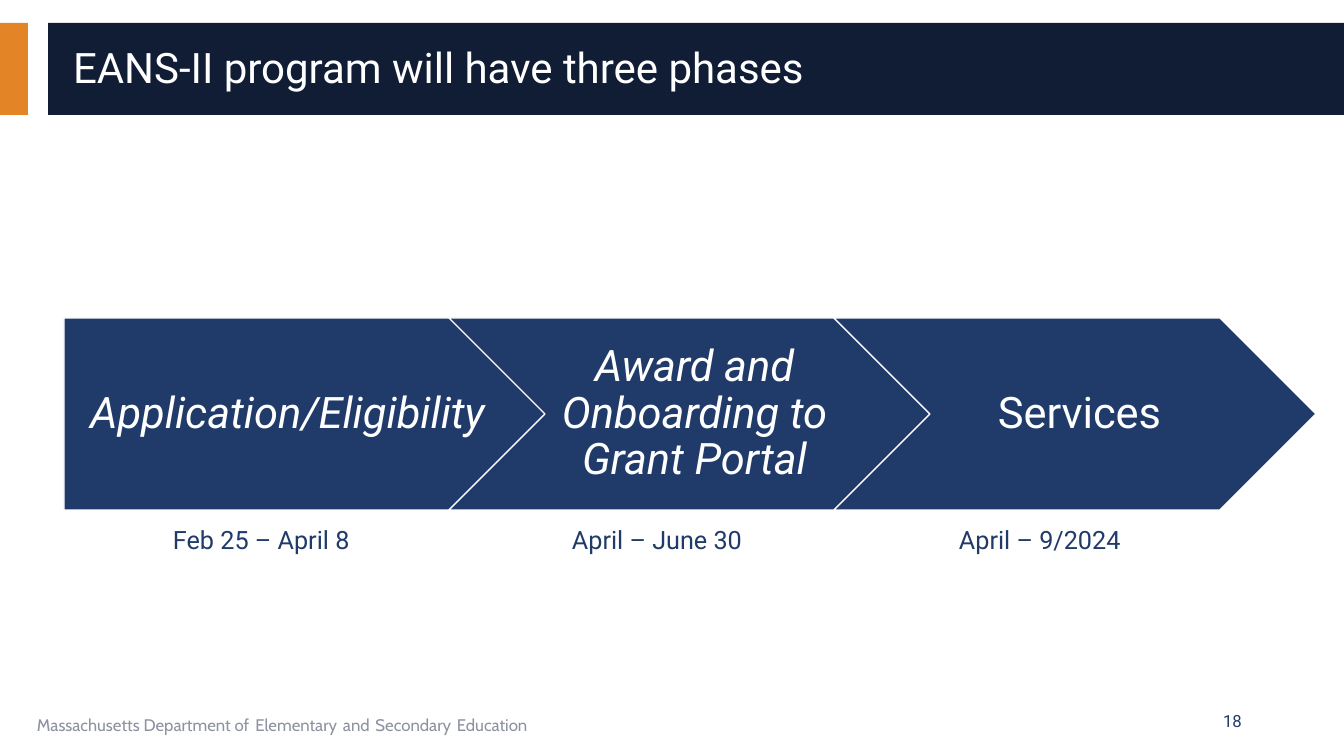
from pptx import Presentation
from pptx.dml.color import RGBColor
from pptx.enum.shapes import MSO_SHAPE
from pptx.enum.text import MSO_ANCHOR, PP_ALIGN
from pptx.util import Pt

EMU_PER_PX = 914400 / 100.8
RECTANGLE, PENTAGON, CHEVRON = MSO_SHAPE.RECTANGLE, MSO_SHAPE.PENTAGON, MSO_SHAPE.CHEVRON
TOP, MIDDLE = MSO_ANCHOR.TOP, MSO_ANCHOR.MIDDLE
LEFT, CENTER, RIGHT = PP_ALIGN.LEFT, PP_ALIGN.CENTER, PP_ALIGN.RIGHT
COLORS = {"orange": "E38526", "navy": "101D35", "blue": "203B6A",
          "grey": "8D92A1", "white": "FFFFFF"}


def add_text(pieces, box, size=18, font="Roboto", color="blue", italic=False,
             anchor=TOP, align=LEFT, spacing=None, insets=(10, 5, 10, 5)):
    """Each piece is (text, overrides), where overrides may set size and color."""
    frame = slide.shapes.add_textbox(*[round(v * EMU_PER_PX) for v in box]).text_frame
    frame.word_wrap = True
    frame.vertical_anchor = anchor
    (frame.margin_left, frame.margin_top,
     frame.margin_right, frame.margin_bottom) = [round(v * EMU_PER_PX) for v in insets]
    paragraph = frame.paragraphs[0]
    paragraph.alignment = align
    paragraph.line_spacing = spacing
    for text, overrides in pieces:
        run = paragraph.add_run()
        run.text = text
        run.font.name = font
        run.font.size = Pt(overrides.get("size", size))
        run.font.italic = italic
        run.font.color.rgb = RGBColor.from_string(COLORS[overrides.get("color", color)])


def add_block(kind, box, fill, outline=None):
    block = slide.shapes.add_shape(kind, *[round(v * EMU_PER_PX) for v in box])
    block.shadow.inherit = False
    block.fill.solid()
    block.fill.fore_color.rgb = RGBColor.from_string(COLORS[fill])
    if outline:
        block.line.color.rgb = RGBColor.from_string(COLORS[outline])
        block.line.width = Pt(1)
    else:
        block.line.fill.background()


presentation = Presentation()
presentation.slide_width = round(1344 * EMU_PER_PX)
presentation.slide_height = round(756 * EMU_PER_PX)
slide = presentation.slides.add_slide(presentation.slide_layouts[6])

# Title band
add_block(RECTANGLE, (0, 23, 28, 92), "orange")
add_block(RECTANGLE, (48, 23, 1296, 92), "navy")
add_text([("EANS-II program will have three phases", {})], (63, 32, 1254, 75),
         size=30, color="white", anchor=MIDDLE, spacing=0.9)

# Footer: small grey words with wider spaces between them
footer = [("Massachusetts Department of", {})]
for word in ("Elementary", "and", "Secondary", "Education"):
    footer += [(" ", {"size": 18, "color": "blue"}), (word, {})]
add_text(footer, (27, 701, 851, 40), size=12, font="Cabin", color="grey")
add_text([("18", {})], (950, 701, 302, 40), size=12, anchor=MIDDLE, align=RIGHT)

# Phases: overlapping arrows with their dates below
PHASE_LEFT, PHASE_TOP, PHASE_PITCH = 64, 318, 385
PHASE_WIDTH, PHASE_HEIGHT = 482, 192
POINT = PHASE_HEIGHT // 2
phases = [
    ("Application/Eligibility", True, "Feb 25 – April 8", 163),
    ("Award and Onboarding to Grant Portal", True, "April – June 30", 562),
    ("Services", False, "April – 9/2024", 949),
]
for index, (phase, italic, dates, dates_left) in enumerate(phases):
    left = PHASE_LEFT + index * PHASE_PITCH
    notch = POINT if index else 0
    add_block(CHEVRON if index else PENTAGON,
              (left, PHASE_TOP, PHASE_WIDTH, PHASE_HEIGHT), "blue", outline="white")
    label_width = PHASE_WIDTH - 2 * notch if index else PHASE_WIDTH - POINT // 2
    add_text([(phase, {})], (left + notch, PHASE_TOP, label_width, PHASE_HEIGHT),
             size=31, color="white", italic=italic, anchor=MIDDLE, align=CENTER,
             spacing=0.9, insets=(14 if index else 18, 9, 5, 9))
    add_text([(dates, {})], (dates_left, 519, 219, 40))

presentation.save("out.pptx")
